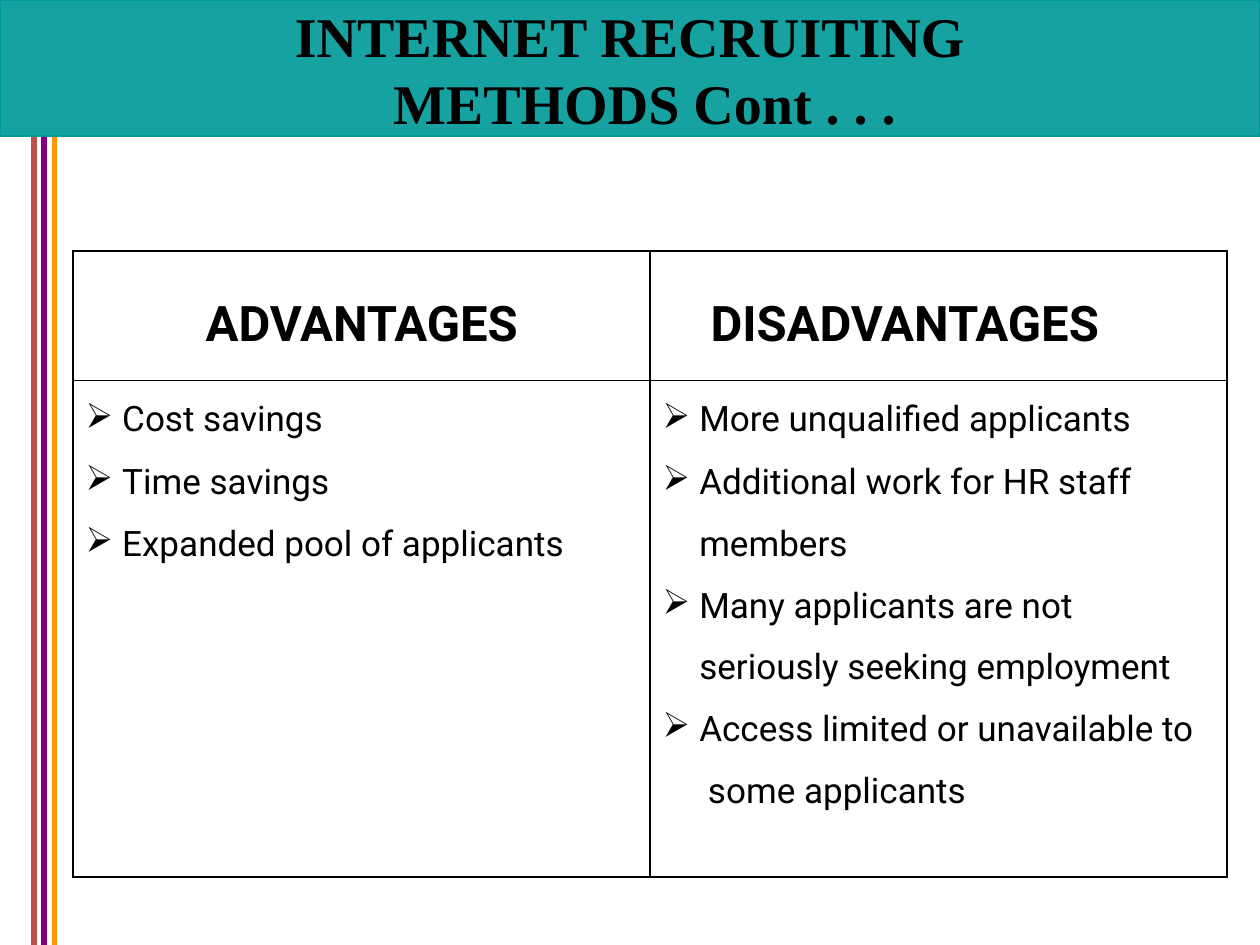
"""Build the slide on advantages and disadvantages of internet recruiting."""
from lxml.etree import SubElement
from pptx import Presentation
from pptx.dml.color import RGBColor as RGB
from pptx.enum.shapes import MSO_CONNECTOR as CONN, MSO_SHAPE as SHAPE
from pptx.enum.text import MSO_ANCHOR as ANCHOR, MSO_AUTO_SIZE as AUTO, PP_ALIGN as ALIGN
from pptx.oxml.ns import qn
from pptx.util import Inches, Pt

COLORS = {"black": "000000", "teal": "009999", "red": "C0504D", "purple": "800080", "orange": "FF9900"}
FORMATS = {
    "title": {"name": "Times New Roman", "size": Pt(32), "bold": True},
    "header": {"name": "Roboto", "size": Pt(28), "bold": True},
    "body": {"name": "Roboto", "size": Pt(20), "bold": False},
}
HEADERS = [("ADVANTAGES", ALIGN.CENTER, 0), ("DISADVANTAGES", ALIGN.LEFT, 0.48)]
BODIES = [
    [("Cost savings", True, 1), ("Time savings", True, 1), ("Expanded pool of applicants", True, 1)],
    [
        ("More unqualified applicants", True, 1),
        ("Additional work for HR staff", True, 1),
        ("members", False, 1),
        ("Many applicants are not\vseriously seeking employment", True, 1.5),
        ("Access limited or unavailable to\v some applicants", True, 1.5),
    ],
]


def write(p, text, style, left=0, hang=0, align=ALIGN.LEFT):
    p.text = text
    p.alignment = align
    pPr = p._p.get_or_add_pPr()
    pPr.set("marL", str(Inches(left)))
    pPr.set("indent", str(Inches(-hang)))
    for r in p.runs:
        for key, value in FORMATS[style].items():
            setattr(r.font, key, value)
        r.font.color.rgb = RGB.from_string(COLORS["black"])
    return pPr


def set_border(cell):
    tcPr = cell._tc.get_or_add_tcPr()
    for side in ("lnL", "lnR", "lnT", "lnB"):
        ln = SubElement(tcPr, qn(f"a:{side}"), w=str(Pt(1)))
        SubElement(SubElement(ln, qn("a:solidFill")), qn("a:srgbClr"), val=COLORS["black"])
    cell.fill.background()


prs = Presentation()
prs.slide_width, prs.slide_height = Inches(10), Inches(7.5)
s = prs.slides.add_slide(prs.slide_layouts[5])

for i, name in enumerate(("red", "purple", "orange")):
    x = Inches(0.27 + 0.08 * i)
    stripe = s.shapes.add_connector(CONN.STRAIGHT, x, Inches(1.08), x, Inches(7.5))
    stripe.line.color.rgb = RGB.from_string(COLORS[name])
    stripe.line.width = Pt(3)
    SubElement(stripe._element.spPr, qn("a:effectLst"))

band = s.shapes.add_shape(SHAPE.RECTANGLE, 0, 0, Inches(10), Inches(1.08))
band.shadow.inherit = False
band.fill.solid()
band.fill.fore_color.rgb = RGB.from_string(COLORS["teal"])
SubElement(band._element.spPr.find(f".//{qn('a:srgbClr')}"), qn("a:alpha"), val="91000")
band.line.color.rgb = RGB.from_string(COLORS["teal"])
band.line.width = Pt(1)

title = s.shapes.title
title.left, title.top, title.width, title.height = Inches(2.33), 0, Inches(5.35), Inches(1.1)
band._element.addnext(title._element)
tf = title.text_frame
tf.auto_size, tf.vertical_anchor, tf.word_wrap = AUTO.NONE, ANCHOR.TOP, True
tf.margin_left = tf.margin_right = tf.margin_bottom = 0
tf.margin_top = Inches(0.01)
write(tf.paragraphs[0], "INTERNET RECRUITING\vMETHODS Cont . . .", "title", 0.79, 0.78)

table = s.shapes.add_table(2, 2, Inches(0.58), Inches(1.99), Inches(9.16), Inches(4.97)).table
table.first_row = table.horz_banding = False
for row, height, top in zip(table.rows, (1.03, 3.94), (0.36, 0.15)):
    row.height = Inches(height)
    for cell in row.cells:
        set_border(cell)
        cell.margin_left = cell.margin_right = cell.margin_bottom = 0
        cell.margin_top = Inches(top)

for col, ((text, align, left), lines) in enumerate(zip(HEADERS, BODIES)):
    write(table.cell(0, col).text_frame.paragraphs[0], text, "header", left, align=align)
    tf = table.cell(1, col).text_frame
    for i, (text, bulleted, spacing) in enumerate(lines):
        p = tf.add_paragraph() if i else tf.paragraphs[0]
        pPr = write(p, text, "body", 0.39, 0.29 if bulleted else 0)
        if bulleted:
            SubElement(pPr, qn("a:buChar"), char="➢")
        p.line_spacing = spacing
        p.space_before = Pt(12 if i and spacing == 1 else 0)

prs.save("out.pptx")
